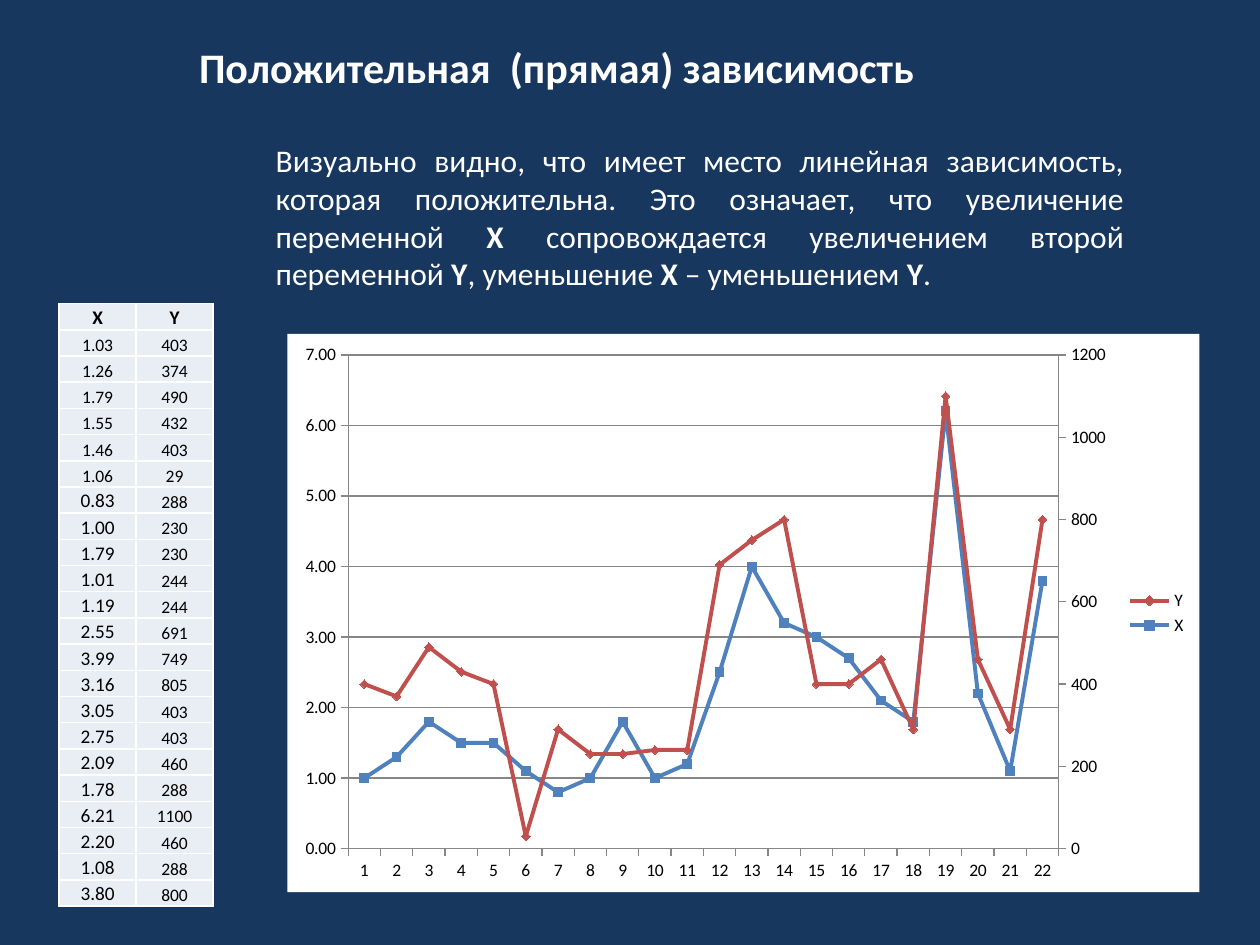
"""Build a slide on positive linear dependence with a data table and a two-axis line chart."""
from copy import deepcopy

from lxml.etree import SubElement
from pptx import Presentation
from pptx.chart.data import CategoryChartData
from pptx.dml.color import RGBColor
from pptx.enum.chart import XL_CHART_TYPE, XL_LEGEND_POSITION, XL_MARKER_STYLE, XL_TICK_MARK
from pptx.enum.text import MSO_ANCHOR, PP_ALIGN
from pptx.oxml import parse_xml
from pptx.oxml.ns import nsdecls, qn
from pptx.util import Inches, Pt

COLORS = {"bg": "17375E", "white": "FFFFFF", "black": "000000", "cell": "E9EDF4",
          "X": "4F81BD", "Y": "C0504D", "axis": "868686"}
X = [1.03, 1.26, 1.79, 1.55, 1.46, 1.06, 0.83, 1.00, 1.79, 1.01, 1.19,
     2.55, 3.99, 3.16, 3.05, 2.75, 2.09, 1.78, 6.21, 2.20, 1.08, 3.80]
Y = [403, 374, 490, 432, 403, 29, 288, 230, 230, 244, 244,
     691, 749, 805, 403, 403, 460, 288, 1100, 460, 288, 800]
CHART_X = [1, 1.3, 1.8, 1.5, 1.5, 1.1, 0.8, 1, 1.8, 1, 1.2,
           2.5, 4, 3.2, 3, 2.7, 2.1, 1.8, 6.2, 2.2, 1.1, 3.8]


def rgb(name):
    return RGBColor.from_string(COLORS[name])


def set_font(font, size, color, bold=None):
    font.name = "Calibri"
    font.size = Pt(size)
    font.color.rgb = rgb(color)
    font.bold = bold


prs = Presentation()
prs.slide_width, prs.slide_height = Inches(10), Inches(7.5)
s = prs.slides.add_slide(prs.slide_layouts[5])
s.background.fill.solid()
s.background.fill.fore_color.rgb = rgb("bg")

title = s.shapes.title
title.left, title.top, title.width, title.height = (Inches(v) for v in (1.48, 0.28, 8.43, 0.5))
title.text_frame.text = "Положительная  (прямая) зависимость"
title.text_frame.vertical_anchor = MSO_ANCHOR.TOP
p = title.text_frame.paragraphs[0]
p.alignment = PP_ALIGN.LEFT
set_font(p.font, 24, "white", True)

tf = s.shapes.add_textbox(Inches(2.09), Inches(1.07), Inches(6.93), Inches(1.31)).text_frame
tf.word_wrap = True
p = tf.paragraphs[0]
p.alignment = PP_ALIGN.JUSTIFY
set_font(p.font, 18, "white")
for text, bold in [
    ("Визуально видно, что имеет место линейная зависимость, которая положительна. "
     "Это означает, что увеличение переменной ", False),
    ("X ", True), ("сопровождается увеличением второй переменной ", False),
    ("Y", True), (", уменьшение ", False), ("X ", True),
    ("– уменьшением ", False), ("Y", True), (".", False),
]:
    r = p.add_run()
    r.text = text
    r.font.bold = bold

rows = [("X", "Y")] + [(f"{x:.2f}", str(y)) for x, y in zip(X, Y)]
table = s.shapes.add_table(len(rows), 2, Inches(0.47), Inches(2.41),
                           Inches(1.22), Inches(4.79)).table
for i, row in enumerate(rows):
    table.rows[i].height = Inches(4.79 / len(rows))
    for j, text in enumerate(row):
        cell = table.cell(i, j)
        cell.text = text
        cell.vertical_anchor = MSO_ANCHOR.BOTTOM
        cell.margin_left = cell.margin_right = cell.margin_top = Inches(0.01)
        cell.margin_bottom = 0
        p = cell.text_frame.paragraphs[0]
        p.alignment = PP_ALIGN.CENTER
        set_font(p.font, 11 if i == 0 or (j == 0 and i > 6) else 10, "black", i == 0)
        tc_pr = cell._tc.get_or_add_tcPr()
        for side in ("a:lnL", "a:lnR", "a:lnT", "a:lnB"):
            ln = SubElement(tc_pr, qn(side), w=str(Pt(1)))
            SubElement(SubElement(ln, qn("a:solidFill")), qn("a:srgbClr"), val=COLORS["white"])
        cell.fill.solid()
        cell.fill.fore_color.rgb = rgb("cell")

data = CategoryChartData()
data.categories = [str(n) for n in range(1, len(X) + 1)]
data.add_series("X", CHART_X, "0.00")
data.add_series("Y", [round(y, -1) for y in Y], "General")
chart = s.shapes.add_chart(XL_CHART_TYPE.LINE_MARKERS_STACKED, Inches(2.28), Inches(2.65),
                           Inches(7.24), Inches(4.43), data).chart
set_font(chart.font, 10, "black")
chart.has_title = False
chart.has_legend = True
chart.legend.position = XL_LEGEND_POSITION.RIGHT
chart.legend.include_in_layout = False

for series, marker in zip(chart.plots[0].series, (XL_MARKER_STYLE.SQUARE, XL_MARKER_STYLE.DIAMOND)):
    color = rgb(series.name)
    series.smooth = False
    series.format.line.width = Pt(2.25)
    series.format.line.color.rgb = color
    series.marker.style = marker
    series.marker.size = 5
    series.marker.format.fill.solid()
    series.marker.format.fill.fore_color.rgb = color
    series.marker.format.line.color.rgb = color

cat_axis, val_axis = chart.category_axis, chart.value_axis
for axis in (cat_axis, val_axis):
    axis.major_tick_mark = XL_TICK_MARK.OUTSIDE
    axis.minor_tick_mark = XL_TICK_MARK.NONE
    axis.format.line.color.rgb = rgb("axis")
val_axis.minimum_scale, val_axis.maximum_scale, val_axis.major_unit = 0, 7, 1
val_axis.has_major_gridlines = True
val_axis.major_gridlines.format.line.color.rgb = rgb("axis")
val_axis.tick_labels.number_format = "0.00"
val_axis.tick_labels.number_format_is_linked = False

area = chart.element.find(".//" + qn("c:plotArea"))
line = area.find(qn("c:lineChart"))
right_line = deepcopy(line)
line.remove(line.findall(qn("c:ser"))[1])
right_line.remove(right_line.find(qn("c:ser")))
line.addnext(right_line)
right_cat, right_val = deepcopy(cat_axis._element), deepcopy(val_axis._element)
val_axis._element.addnext(right_val)
right_val.addnext(right_cat)
for el, value in zip(right_line.findall(qn("c:axId")), ("5001", "5002")):
    el.set("val", value)
for axis, settings in (
    (right_cat, {"axId": "5001", "crossAx": "5002", "delete": "1"}),
    (right_val, {"axId": "5002", "crossAx": "5001", "axPos": "r", "crosses": "max",
                 "max": "1200", "majorUnit": "200"}),
):
    for tag, value in settings.items():
        axis.find(".//" + qn("c:" + tag)).set("val", value)
right_val.remove(right_val.find(qn("c:majorGridlines")))
right_val.find(qn("c:numFmt")).set("formatCode", "General")

chart.element.find(qn("c:chart")).addnext(parse_xml(
    f'<c:spPr {nsdecls("c", "a")}><a:solidFill><a:srgbClr val="{COLORS["white"]}"/></a:solidFill>'
    '<a:ln><a:noFill/></a:ln></c:spPr>'))

prs.save("out.pptx")
